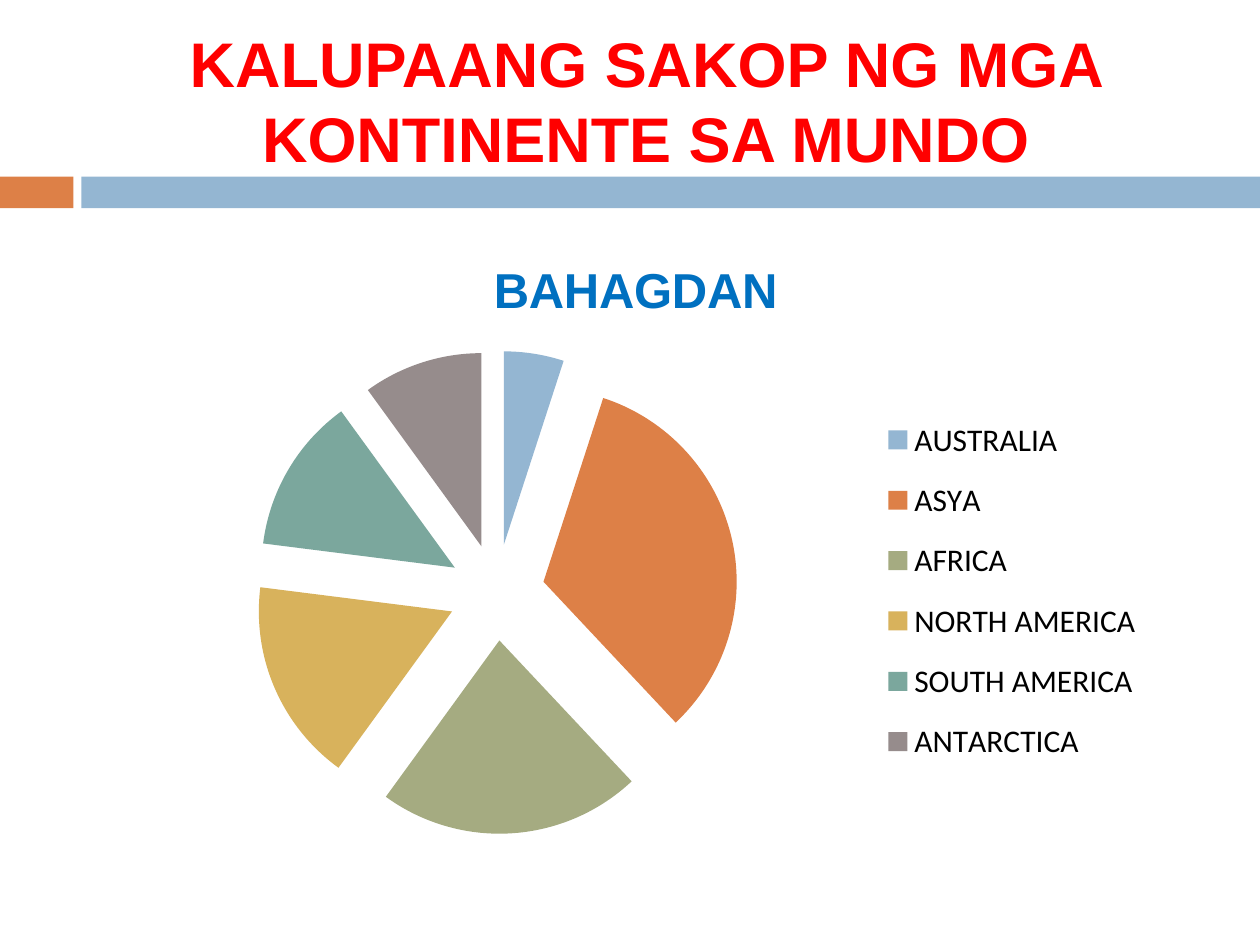
from lxml.etree import SubElement
from pptx import Presentation
from pptx.chart.data import CategoryChartData
from pptx.dml.color import RGBColor
from pptx.enum.chart import XL_CHART_TYPE as ChartType, XL_LEGEND_POSITION as LegendPosition
from pptx.enum.shapes import MSO_SHAPE as Shape
from pptx.enum.text import MSO_ANCHOR as Anchor, PP_ALIGN as Align
from pptx.oxml.ns import qn
from pptx.util import Cm, Pt

COLORS = {
    "title": "FF0000", "chart title": "0070C0", "text": "000000",
    "blue": "94B6D2", "orange": "DD8047", "green": "A5AB81",
    "gold": "D8B25C", "teal": "7BA79D", "taupe": "968C8C",
}
CONTINENTS = [
    ("AUSTRALIA", 5, "blue"),
    ("ASYA", 33, "orange"),
    ("AFRICA", 22, "green"),
    ("NORTH AMERICA", 17, "gold"),
    ("SOUTH AMERICA", 13, "teal"),
    ("ANTARCTICA", 10, "taupe"),
]
# Legend box as fractions of the chart area
LEGEND_LAYOUT = {"xMode": "edge", "yMode": "edge", "x": 0.71, "y": 0.27, "w": 0.25, "h": 0.62}


def style_font(font, name, size, color, bold=False):
    font.name, font.size, font.bold = name, Pt(size), bold
    font.color.rgb = RGBColor.from_string(COLORS[color])


presentation = Presentation()
presentation.slide_width, presentation.slide_height = Cm(25.4), Cm(19.05)
slide = presentation.slides.add_slide(presentation.slide_layouts[6])

# Two-part band under the title
for left, width, color in [(0, 1.48, "orange"), (1.64, 23.76, "blue")]:
    band = slide.shapes.add_shape(Shape.RECTANGLE, Cm(left), Cm(3.56), Cm(width), Cm(0.64))
    band.shadow.inherit = False
    band.fill.solid()
    band.fill.fore_color.rgb = RGBColor.from_string(COLORS[color])
    band.line.fill.background()

# Title
title = slide.shapes.add_textbox(Cm(1.69), Cm(0.64), Cm(22.66), Cm(2.74))
title.text_frame.word_wrap = True
title.text_frame.vertical_anchor = Anchor.MIDDLE
paragraph = title.text_frame.paragraphs[0]
paragraph.text = "KALUPAANG SAKOP NG MGA KONTINENTE SA MUNDO"
paragraph.alignment = Align.CENTER
style_font(paragraph.font, "Arial", 36, "title", bold=True)

# Pie chart of land share
chart_data = CategoryChartData()
chart_data.categories = [name for name, share, color in CONTINENTS]
chart_data.add_series("BAHAGDAN", [share for name, share, color in CONTINENTS])
chart = slide.shapes.add_chart(
    ChartType.PIE, Cm(1.48), Cm(4.66), Cm(22.66), Cm(12.5), chart_data).chart
style_font(chart.font, "Calibri", 18, "text")

chart.has_title = True
chart_title = chart.chart_title.text_frame.paragraphs[0]
chart_title.text = "BAHAGDAN"
style_font(chart_title.font, "Arial", 28, "chart title", bold=True)
style_font(chart_title.runs[0].font, "Arial", 28, "chart title", bold=True)

chart.has_legend = True
chart.legend.position = LegendPosition.RIGHT
chart.legend.include_in_layout = False
legend = chart.legend._element
for old_layout in legend.findall(qn("c:layout")):
    legend.remove(old_layout)
layout = SubElement(legend, qn("c:layout"))
legend.find(qn("c:legendPos")).addnext(layout)
manual_layout = SubElement(layout, qn("c:manualLayout"))
for key, value in LEGEND_LAYOUT.items():
    SubElement(manual_layout, qn(f"c:{key}"), val=str(value))

plot = chart.plots[0]
plot.vary_by_categories = True
series = plot.series[0]
series.format.line.fill.background()
explosion = SubElement(series._element, qn("c:explosion"), val="25")
series._element.find(qn("c:spPr")).addnext(explosion)
for index, (name, share, color) in enumerate(CONTINENTS):
    point = series.points[index].format
    point.fill.solid()
    point.fill.fore_color.rgb = RGBColor.from_string(COLORS[color])
    point.line.fill.background()
    # Each point needs its own explosion, placed before its formatting
    data_point = series._element.findall(qn("c:dPt"))[index]
    point_explosion = SubElement(data_point, qn("c:explosion"), val="25")
    data_point.find(qn("c:spPr")).addprevious(point_explosion)

presentation.save("out.pptx")
